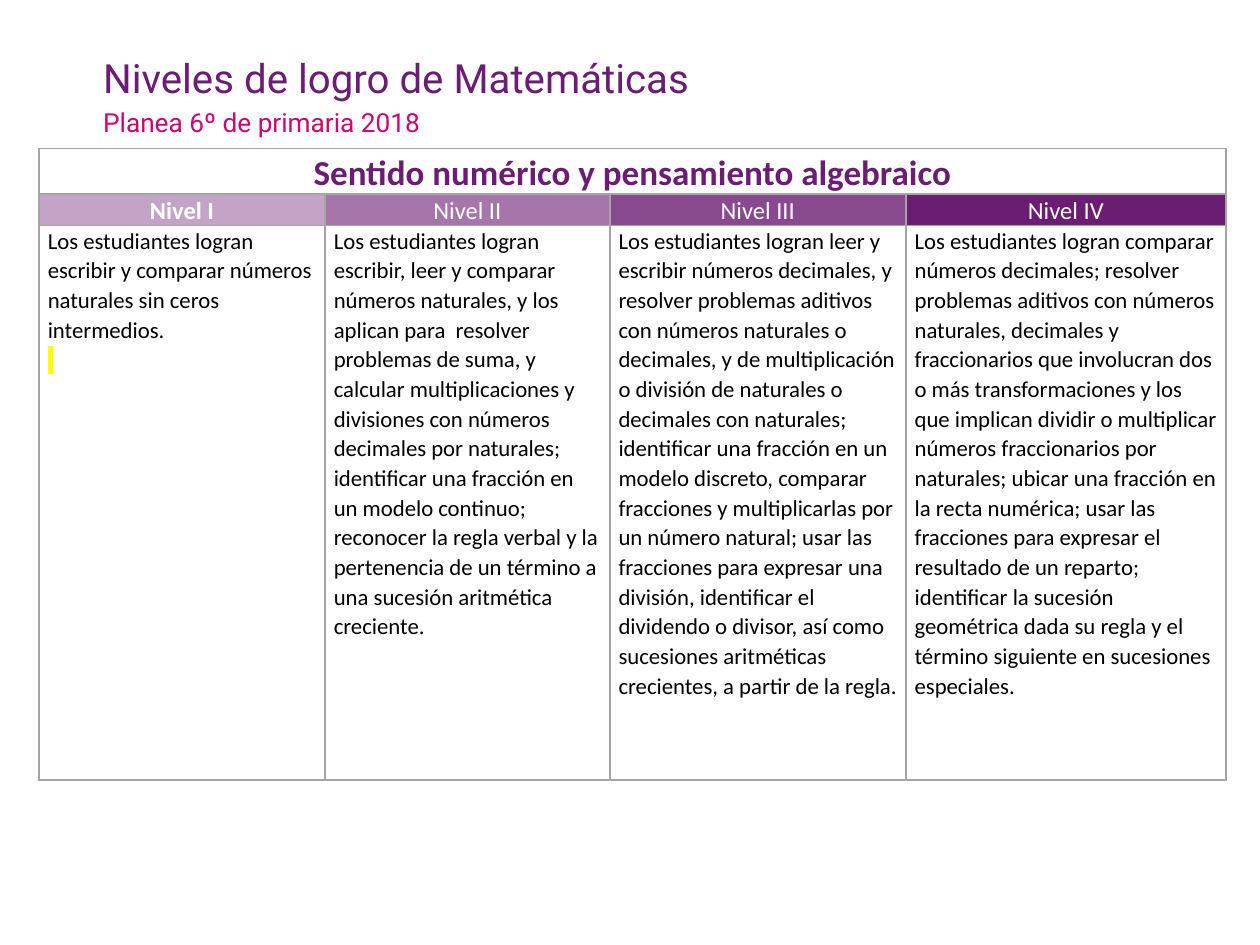
"""Build the slide of mathematics achievement levels as a four-column table."""
from lxml import etree
from pptx import Presentation
from pptx.dml.color import RGBColor
from pptx.enum.text import MSO_ANCHOR, PP_ALIGN
from pptx.oxml.ns import qn
from pptx.util import Inches, Pt

PURPLE = RGBColor(0x6B, 0x1C, 0x73)
PINK = RGBColor(0xCC, 0x06, 0x71)
GREY = RGBColor(0xA5, 0xA5, 0xA5)
YELLOW = RGBColor(0xFF, 0xFF, 0x00)
WHITE = RGBColor(0xFF, 0xFF, 0xFF)
BLACK = RGBColor(0x00, 0x00, 0x00)

HEADINGS = [
    ("Niveles de logro de Matemáticas", (0.72, 0.43, 8.78, 0.42), 23, PURPLE, 0.9, MSO_ANCHOR.MIDDLE),
    ("Planea 6º de primaria 2018", (0.72, 0.74, 8.62, 0.78), 15, PINK, 1.2, MSO_ANCHOR.TOP),
]
TOPIC = "Sentido numérico y pensamiento algebraico"
LEVELS = [
    ("Nivel I", 40, [
        "Los estudiantes logran escribir y comparar números naturales sin ceros intermedios.",
        " "]),
    ("Nivel II", 60, [
        "Los estudiantes logran escribir, leer y comparar números naturales, y los aplican para  "
        "resolver problemas de suma, y calcular multiplicaciones y divisiones con números decimales "
        "por naturales; identificar una fracción en un modelo continuo; reconocer la regla verbal y "
        "la pertenencia de un término a una sucesión aritmética creciente."]),
    ("Nivel III", 80, [
        "Los estudiantes logran leer y escribir números decimales, y resolver problemas aditivos con "
        "números naturales o decimales, y de multiplicación o división de naturales o decimales con "
        "naturales; identificar una fracción en un modelo discreto, comparar fracciones y "
        "multiplicarlas por un número natural; usar las fracciones para expresar una división, "
        "identificar el dividendo o divisor, así como sucesiones aritméticas crecientes, a partir "
        "de la regla."]),
    ("Nivel IV", 100, [
        "Los estudiantes logran comparar números decimales; resolver problemas aditivos con números "
        "naturales, decimales y fraccionarios que involucran dos o más transformaciones y los que "
        "implican dividir o multiplicar números fraccionarios por naturales; ubicar una fracción en "
        "la recta numérica; usar las fracciones para expresar el resultado de un reparto; "
        "identificar la sucesión geométrica dada su regla y el término siguiente en sucesiones "
        "especiales."]),
]
LEFT, TOP = 0.31, 1.18
COL_WIDTHS = [2.27, 2.26, 2.35, 2.54]
ROW_HEIGHTS = [0.36, 0.25, 4.4]


def add_run(p, value, size, color, font, bold=False):
    r = p.add_run()
    r.text = value
    r.font.size, r.font.name, r.font.bold = Pt(size), font, bold
    r.font.color.rgb = color
    return r


def highlight(r, color):
    mark = etree.Element(qn("a:highlight"))
    etree.SubElement(mark, qn("a:srgbClr"), val=str(color))
    r.font.fill._xPr.find(qn("a:solidFill")).addnext(mark)


def style_cell(cell, color, inset, alpha=100):
    cell.fill.solid()
    cell.fill.fore_color.rgb = color
    cell.margin_left = cell.margin_right = Inches(inset)
    cell.margin_top = cell.margin_bottom = 0
    tc_pr = cell._tc.get_or_add_tcPr()
    if alpha < 100:
        clr = tc_pr.find(qn("a:solidFill"))[0]
        etree.SubElement(clr, qn("a:alpha"), val=str(alpha * 1000))
    for i, side in enumerate("LRTB"):
        ln = etree.Element(qn(f"a:ln{side}"), w=str(Pt(1)))
        fill = etree.SubElement(ln, qn("a:solidFill"))
        etree.SubElement(fill, qn("a:srgbClr"), val=str(GREY))
        tc_pr.insert(i, ln)


def write_cell(cell, lines, size, color, align, bold=False):
    tf = cell.text_frame
    for i, line in enumerate(lines):
        p = tf.add_paragraph() if i else tf.paragraphs[0]
        p.alignment, p.line_spacing = align, 1.07
        r = add_run(p, line, size, color, "Calibri", bold)
        if not line.strip():
            highlight(r, YELLOW)


def main():
    prs = Presentation()
    prs.slide_width, prs.slide_height = Inches(10), Inches(7.5)
    s = prs.slides.add_slide(prs.slide_layouts[6])

    for value, box, size, color, spacing, anchor in HEADINGS:
        tf = s.shapes.add_textbox(*map(Inches, box)).text_frame
        tf.word_wrap, tf.vertical_anchor = True, anchor
        p = tf.paragraphs[0]
        p.line_spacing = spacing
        add_run(p, value, size, color, "Roboto")

    frame = s.shapes.add_table(len(ROW_HEIGHTS), len(LEVELS), Inches(LEFT), Inches(TOP),
                               Inches(sum(COL_WIDTHS)), Inches(sum(ROW_HEIGHTS)))
    table = frame.table
    for col, width in zip(table.columns, COL_WIDTHS):
        col.width = Inches(width)
    for row, height in zip(table.rows, ROW_HEIGHTS):
        row.height = Inches(height)

    for i, (level, alpha, lines) in enumerate(LEVELS):
        topic, head, body = (table.cell(row, i) for row in range(3))
        style_cell(topic, WHITE, 0.05)
        style_cell(head, PURPLE, 0.05, alpha)
        style_cell(body, WHITE, 0.07)
        write_cell(head, [level], 14, WHITE, PP_ALIGN.CENTER, bold=i == 0)
        write_cell(body, lines, 13, BLACK, PP_ALIGN.LEFT)

    topic = table.cell(0, 0)
    topic.merge(table.cell(0, len(LEVELS) - 1))
    topic.vertical_anchor = MSO_ANCHOR.MIDDLE
    write_cell(topic, [TOPIC], 20, PURPLE, PP_ALIGN.CENTER, bold=True)

    prs.save("out.pptx")


if __name__ == "__main__":
    main()
